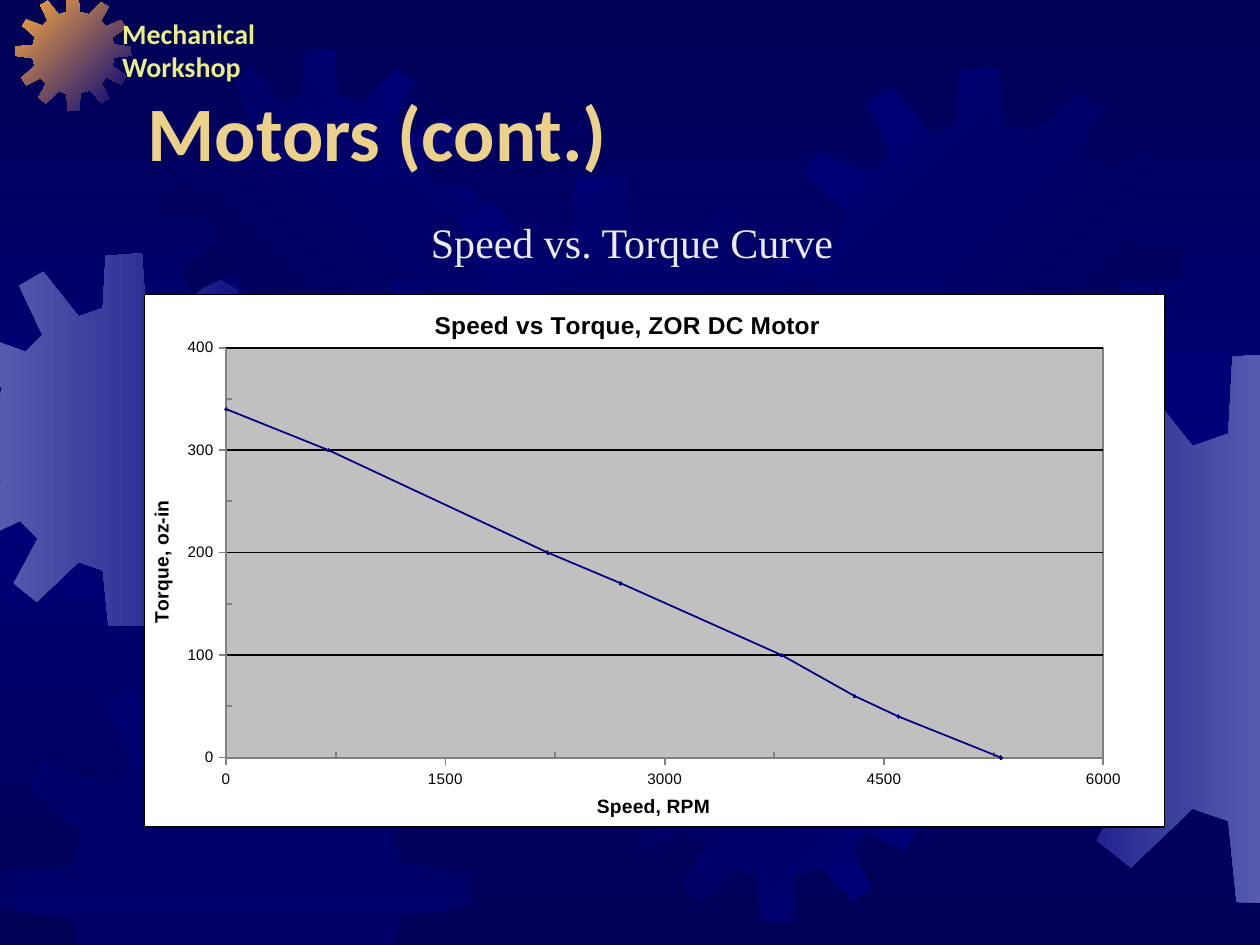
"""Build the slide with the speed and torque curve of a motor."""
from copy import deepcopy
from lxml.etree import SubElement
from pptx import Presentation
from pptx.chart.data import XyChartData
from pptx.dml.color import RGBColor
from pptx.enum.chart import XL_CHART_TYPE, XL_MARKER_STYLE, XL_TICK_MARK
from pptx.enum.text import MSO_ANCHOR, MSO_AUTO_SIZE
from pptx.oxml import parse_xml
from pptx.oxml.ns import nsdecls, qn
from pptx.util import Inches, Pt

BLACK = RGBColor(0, 0, 0)
WHITE = RGBColor(0xFF, 0xFF, 0xFF)
NIGHT = RGBColor(0x00, 0x00, 0x54)
NAVY = RGBColor(0x00, 0x00, 0x7A)
STEEL = RGBColor(0x55, 0x5B, 0xAD)
ORANGE = RGBColor(0xFC, 0xAB, 0x40)
LIGHT = RGBColor(0xEA, 0xEA, 0xEA)
GOLD = RGBColor(0xEB, 0xD1, 0x89)
YELLOW = RGBColor(0xEA, 0xED, 0x83)
CURVE = RGBColor(0x00, 0x00, 0x80)
GREY = RGBColor(0x80, 0x80, 0x80)
SILVER = RGBColor(0xC0, 0xC0, 0xC0)

WIDTH, HEIGHT = 10, 7.5
GEAR_SIZE = 401
GEAR = [
    (255, 67), (223, 59), (219, 0), (180, 3), (177, 59), (151, 68), (113, 20), (87, 35),
    (112, 88), (94, 106), (38, 85), (25, 107), (68, 145), (61, 174), (1, 178), (0, 210),
    (61, 219), (67, 246), (22, 287), (38, 312), (88, 288), (107, 307), (81, 355), (106, 375),
    (151, 332), (177, 341), (183, 400), (222, 401), (226, 339), (259, 330), (299, 374), (325, 358),
    (299, 306), (316, 284), (368, 309), (384, 281), (336, 246), (342, 216), (401, 210), (400, 180),
    (341, 171), (335, 148), (383, 114), (367, 87), (313, 109), (296, 91), (323, 41), (297, 25),
]
# left, top, diameter, start colour, end colour, clockwise angle
GEARS = [
    (-0.49, 2.01, 2.96, STEEL, NAVY, 0),
    (0.12, -0.04, 0.92, ORANGE, NAVY, 45),
    (1.3, 0.39, 2.48, NIGHT, NAVY, 315),
    (2.77, 1.39, 4.01, NAVY, NIGHT, 45),
    (0, 5.25, 3.74, NAVY, None, 0),
    (4.91, 4.84, 2.48, NIGHT, NAVY, 45),
    (6.18, 0.53, 3.2, NAVY, NIGHT, 45),
    (7.82, 2.8, 4.37, NAVY, STEEL, 0),
]
TEXTS = [
    ("Speed vs. Torque Curve", (3.37, 1.67, 3.31, 0.46), False, MSO_ANCHOR.TOP,
     {"size": Pt(24), "name": "Times New Roman"}, LIGHT),
    ("Motors (cont.)", (1.12, 0.37, 8.5, 1.08), True, MSO_ANCHOR.BOTTOM,
     {"size": Pt(44), "name": "Calibri", "bold": True}, GOLD),
    ("Mechanical\vWorkshop", (0.92, 0.08, 2.02, 0.64), False, MSO_ANCHOR.TOP,
     {"size": Pt(16), "name": "Calibri", "bold": True}, YELLOW),
]
CHART_TITLE = ("Speed vs Torque, ZOR DC Motor", 14, (0.28, 0.02))
POINTS = [(5300, 0), (4600, 40), (4300, 60), (3800, 100),
          (2700, 170), (2200, 200), (700, 300), (0, 340)]
AXES = {
    "category_axis": ("Speed, RPM", 6000, 1500, (0.44, 0.93)),
    "value_axis": ("Torque, oz-in", 400, 100, (0, 0.38)),
}


def set_attrs(obj, values):
    for name, value in values.items():
        setattr(obj, name, value)


def set_font(font, values, color):
    set_attrs(font, values)
    font.color.rgb = color


def set_line(line, color):
    line.color.rgb = color
    line.width = Pt(1)


def set_gradient(fill, colors, angle):
    fill.gradient()
    fill.gradient_angle = -angle % 360
    for stop, color, position in zip(fill.gradient_stops, colors, (0, 1)):
        stop.color.rgb = color
        stop.position = position


def clip(points, axis, limit, sign):
    kept = []
    for a, b in zip(points, points[1:] + points[:1]):
        da, db = sign * (a[axis] - limit), sign * (b[axis] - limit)
        if da >= 0:
            kept.append(a)
        if da * db < 0:
            t = da / (da - db)
            kept.append(tuple(u + t * (v - u) for u, v in zip(a, b)))
    return kept


def add_gear(s, left, top, size, start, end, angle):
    k = size / GEAR_SIZE
    points = [(left + x * k, top + y * k) for x, y in GEAR]
    for axis, limit, sign in ((0, 0, 1), (0, WIDTH, -1), (1, 0, 1), (1, HEIGHT, -1)):
        points = clip(points, axis, limit, sign)
    points = [(Inches(x), Inches(y)) for x, y in points]
    builder = s.shapes.build_freeform(*points[0])
    builder.add_line_segments(points[1:], close=True)
    sp = builder.convert_to_shape()
    sp.shadow.inherit = False
    sp.line.fill.background()
    if end is not None:
        set_gradient(sp.fill, (start, end), angle)
    else:
        sp.fill.solid()
        sp.fill.fore_color.rgb = start
        color = sp.fill._xPr.find(".//" + qn("a:srgbClr"))
        SubElement(color, qn("a:alpha"), val="50000")


def add_text(s, text, box, wrap, anchor, font, color):
    tf = s.shapes.add_textbox(*map(Inches, box)).text_frame
    set_attrs(tf, {"word_wrap": wrap, "vertical_anchor": anchor,
                   "auto_size": MSO_AUTO_SIZE.NONE if wrap else MSO_AUTO_SIZE.SHAPE_TO_FIT_TEXT})
    set_attrs(tf, dict.fromkeys(
        ("margin_left", "margin_top", "margin_right", "margin_bottom"), Inches(0.05)))
    p = tf.paragraphs[0]
    p.text = text
    for r in p.runs:
        set_font(r.font, font, color)


def place(el, index, inner=False, **values):
    old = el.find(qn("c:layout"))
    if old is not None:
        el.remove(old)
    target = '<c:layoutTarget val="inner"/>' if inner else ""
    modes = "".join(f'<c:{n}Mode val="edge"/>' for n in "xy")
    sizes = "".join(f'<c:{n} val="{v}"/>' for n, v in values.items())
    el.insert(index, parse_xml(f'<c:layout {nsdecls("c")}><c:manualLayout>{target}{modes}{sizes}'
                               '</c:manualLayout></c:layout>'))


def set_title(owner, text, size, spot):
    owner.has_title = True
    title = owner.chart_title if hasattr(owner, "chart_title") else owner.axis_title
    p = title.text_frame.paragraphs[0]
    r = p.add_run()
    r.text = text
    set_font(r.font, {"size": Pt(size), "name": "Arial", "bold": True}, BLACK)
    place(title._element, 1, x=spot[0], y=spot[1])


def shape_props(fill, line):
    fills = [f'<a:solidFill><a:srgbClr val="{c}"/></a:solidFill>' for c in (fill, line)]
    return parse_xml(f'<c:spPr {nsdecls("c", "a")}>{fills[0]}<a:ln w="12700">{fills[1]}</a:ln></c:spPr>')


def add_curve(s):
    data = XyChartData()
    series = data.add_series("Series 1")
    for x, y in POINTS:
        series.add_data_point(x, y)
    chart = s.shapes.add_chart(XL_CHART_TYPE.XY_SCATTER_SMOOTH, Inches(1.14), Inches(2.33),
                               Inches(8.11), Inches(4.24), data).chart
    chart.has_legend = False
    set_font(chart.font, {"size": Pt(10), "name": "Times New Roman"}, NAVY)
    set_title(chart, *CHART_TITLE)
    chart.chart_title.include_in_layout = True
    for name, (title, maximum, step, spot) in AXES.items():
        axis = getattr(chart, name)
        set_attrs(axis, {"minimum_scale": 0, "maximum_scale": maximum,
                         "major_unit": step, "minor_unit": step / 2,
                         "major_tick_mark": XL_TICK_MARK.OUTSIDE,
                         "minor_tick_mark": XL_TICK_MARK.INSIDE,
                         "has_major_gridlines": name == "value_axis"})
        set_attrs(axis.tick_labels, {"number_format": "0", "number_format_is_linked": False})
        set_font(axis.tick_labels.font, {"size": Pt(8.7), "name": "Arial"}, BLACK)
        set_line(axis.format.line, GREY)
        set_title(axis, title, 11, spot)
    set_line(chart.value_axis.major_gridlines.format.line, BLACK)
    plot = chart.plots[0]
    plot.vary_by_categories = False
    curve = plot.series[0]
    curve.smooth = True
    set_line(curve.format.line, CURVE)
    set_attrs(curve.marker, {"style": XL_MARKER_STYLE.DIAMOND, "size": 2})
    curve.marker.format.fill.solid()
    curve.marker.format.fill.fore_color.rgb = CURVE
    curve.marker.format.line.color.rgb = CURVE
    root = chart._chartSpace
    area = root.find(".//" + qn("c:plotArea"))
    place(area, 0, inner=True, x=0.08, y=0.1, w=0.86, h=0.77)
    area.append(shape_props(SILVER, GREY))
    root.find(qn("c:chart")).addnext(shape_props(WHITE, BLACK))


def main():
    prs = Presentation()
    prs.slide_width, prs.slide_height = Inches(WIDTH), Inches(HEIGHT)
    s = prs.slides.add_slide(prs.slide_layouts[6])
    set_gradient(s.background.fill, (NIGHT, NAVY), 270)
    stops = s._element.find(".//" + qn("a:gsLst"))
    stops[1].set("pos", "50000")
    last = deepcopy(stops[0])
    last.set("pos", "100000")
    stops.append(last)
    for gear in GEARS:
        add_gear(s, *gear)
    add_curve(s)
    for text in TEXTS:
        add_text(s, *text)
    prs.save("out.pptx")


if __name__ == "__main__":
    main()
